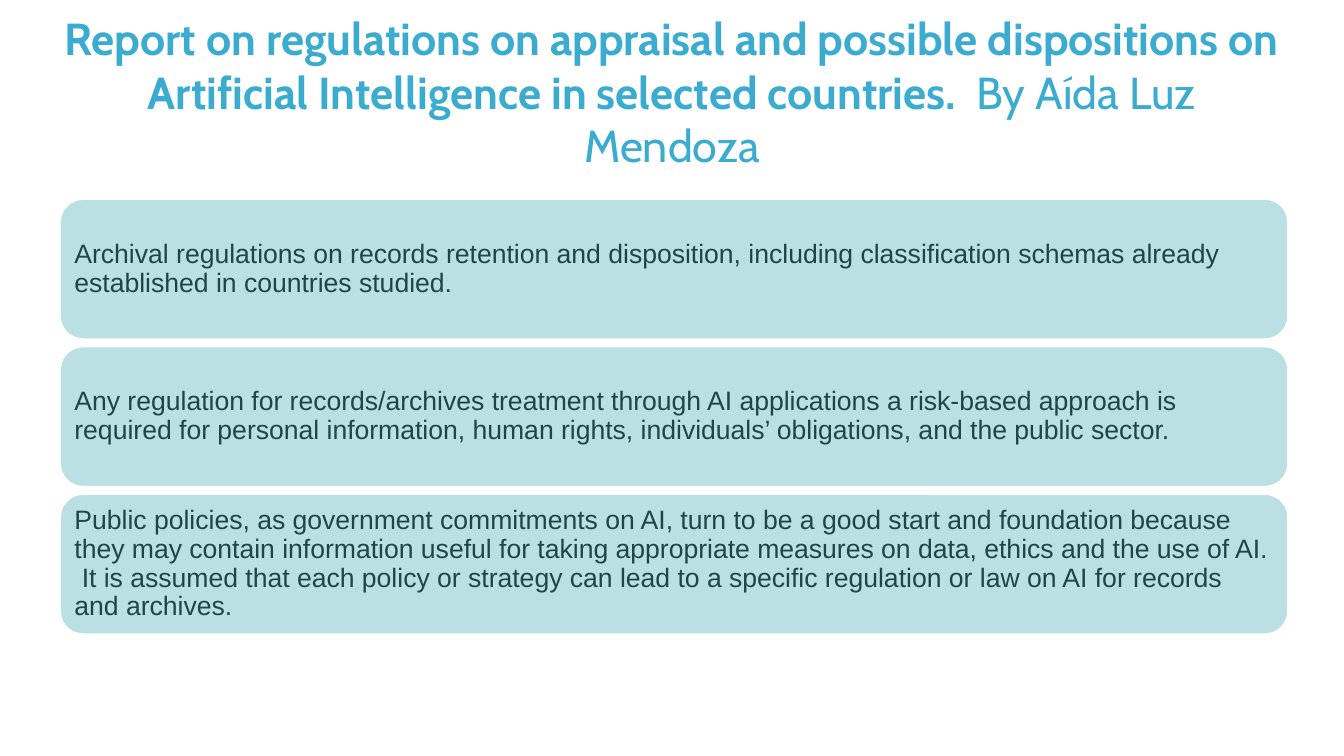
"""Build a slide with a centred title above three stacked statement panels."""
import pptx
import pptx.dml.color
import pptx.enum.shapes
import pptx.enum.text
import pptx.util

THEME = {
    "title_font": "Cabin",
    "body_font": "Arial",
    "title_size": pptx.util.Pt(32),
    "body_size": pptx.util.Pt(19),
    "title_color": pptx.dml.color.RGBColor.from_string("3BACCF"),
    "body_color": pptx.dml.color.RGBColor.from_string("1E4649"),
    "panel_color": pptx.dml.color.RGBColor.from_string("BBE0E3"),
    "background": pptx.dml.color.RGBColor.from_string("FFFFFF"),
}
TITLE_RUNS = [
    ("Report on regulations on appraisal and possible dispositions on "
     "Artificial Intelligence in selected countries. ", True),
    (" By Aída Luz Mendoza", False),
]
STATEMENTS = [
    "Archival regulations on records retention and disposition, including "
    "classification schemas already established in countries studied.",
    "Any regulation for records/archives treatment through AI applications a "
    "risk-based approach is required for personal information, human rights, "
    "individuals’ obligations, and the public sector.",
    "Public policies, as government commitments on AI, turn to be a good start "
    "and foundation because they may contain information useful for taking "
    "appropriate measures on data, ethics and the use of AI.  It is assumed that "
    "each policy or strategy can lead to a specific regulation or law on AI for "
    "records and archives.",
]
PANEL_LEFT, PANEL_TOP = 0.59, 1.97
PANEL_WIDTH, PANEL_HEIGHT = 12.19, 1.4
PANEL_PITCH = PANEL_HEIGHT * (1 + 1 / 22)

inches = pptx.util.Inches
presentation = pptx.Presentation()
presentation.slide_width = inches(13.33)
presentation.slide_height = inches(7.5)
slide = presentation.slides.add_slide(presentation.slide_layouts[6])
slide.background.fill.solid()
slide.background.fill.fore_color.rgb = THEME["background"]

title = slide.shapes.add_textbox(inches(0.47), inches(0.28), inches(12.39), inches(1.25))
title.text_frame.word_wrap = True
title.text_frame.vertical_anchor = pptx.enum.text.MSO_ANCHOR.MIDDLE
paragraph = title.text_frame.paragraphs[0]
paragraph.alignment = pptx.enum.text.PP_ALIGN.CENTER
paragraph.font.name = THEME["title_font"]
paragraph.font.size = THEME["title_size"]
paragraph.font.color.rgb = THEME["title_color"]
for text, bold in TITLE_RUNS:
    run = paragraph.add_run()
    run.text = text
    run.font.bold = bold

for row, statement in enumerate(STATEMENTS):
    panel = slide.shapes.add_shape(
        pptx.enum.shapes.MSO_SHAPE.ROUNDED_RECTANGLE,
        inches(PANEL_LEFT), inches(PANEL_TOP + row * PANEL_PITCH),
        inches(PANEL_WIDTH), inches(PANEL_HEIGHT))
    panel.shadow.inherit = False
    panel.fill.solid()
    panel.fill.fore_color.rgb = THEME["panel_color"]
    panel.line.color.rgb = THEME["background"]
    panel.line.width = pptx.util.Pt(2)

    frame = panel.text_frame
    frame.word_wrap = True
    frame.vertical_anchor = pptx.enum.text.MSO_ANCHOR.MIDDLE
    frame.margin_left = frame.margin_right = inches(0.08)
    frame.margin_top = frame.margin_bottom = inches(0.08)
    frame.text = statement
    paragraph = frame.paragraphs[0]
    paragraph.alignment = pptx.enum.text.PP_ALIGN.LEFT
    paragraph.line_spacing = 0.9
    paragraph.font.name = THEME["body_font"]
    paragraph.font.size = THEME["body_size"]
    paragraph.font.color.rgb = THEME["body_color"]

presentation.save("out.pptx")
